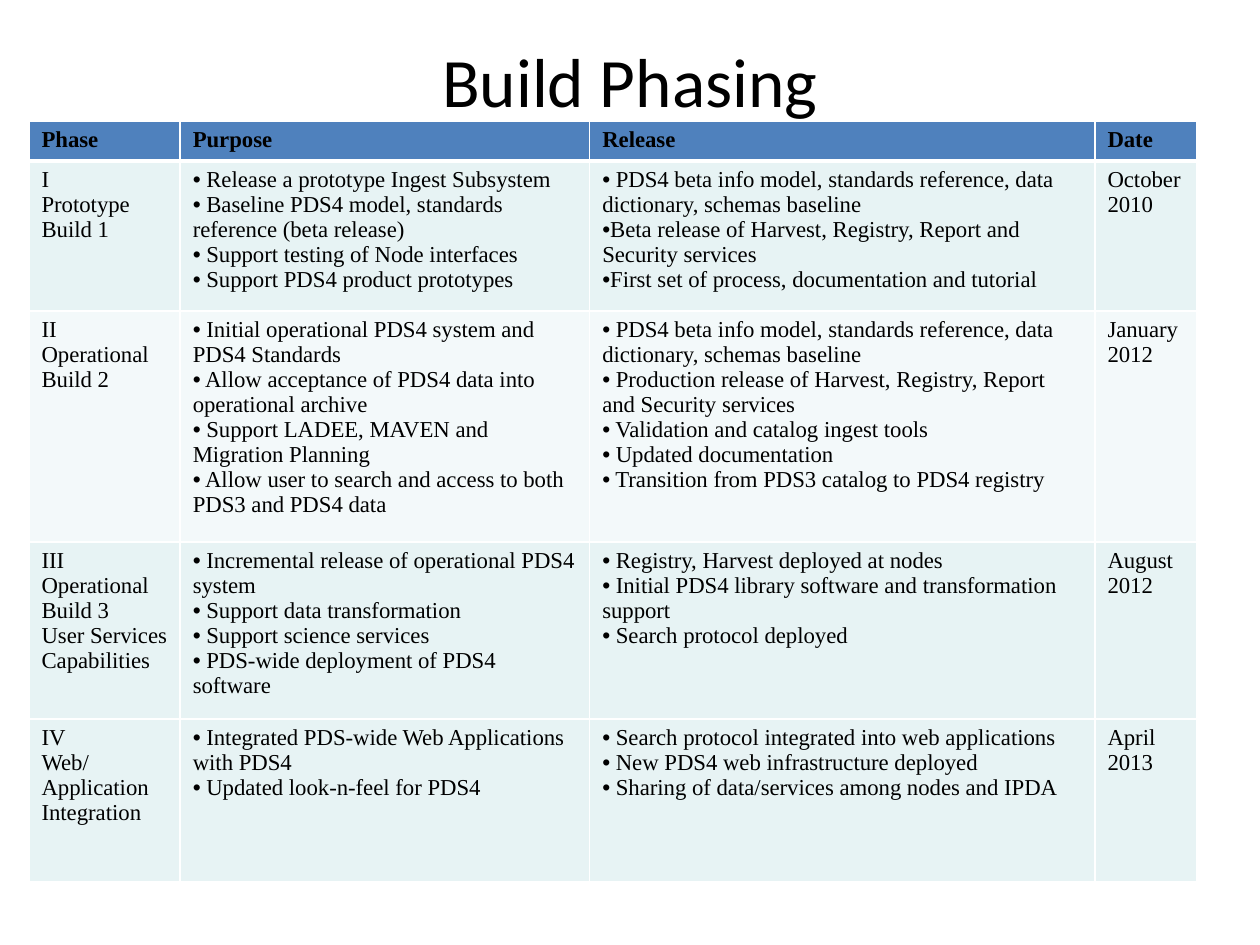
from pptx import Presentation
from pptx import util as u
from pptx.dml.color import RGBColor
from pptx.enum import text
from pptx.oxml import parse_xml
from pptx.oxml.ns import nsdecls

HUES = {"ink": "000000", "head": "4F81BD", "band": "E7F3F4",
        "pale": "F3F9FA", "rule": "FFFFFF"}
COLS = [1.2, 3.25, 4.01, 0.81]
ROWS = [0.3, 1.19, 1.71, 1.31, 1.29]
FILLS = ["head", "band", "pale", "band", "band"]
LISTS = (1, 2)  # bulleted columns

HEADS = ["Phase", "Purpose", "Release", "Date"]
# One entry per phase; each cell is a list of paragraphs
PHASES = [
    [["I", "Prototype", "Build 1"],
     [" Release a prototype Ingest Subsystem",
      " Baseline PDS4 model, standards reference (beta release)",
      " Support testing of Node interfaces",
      " Support PDS4 product prototypes"],
     [" PDS4 beta info model, standards reference, data dictionary, schemas baseline",
      "Beta release of Harvest, Registry, Report and Security services",
      "First set of process, documentation and tutorial"],
     ["October", "2010"]],
    [["II", "Operational", "Build 2"],
     [" Initial operational PDS4 system and PDS4 Standards",
      " Allow acceptance of PDS4 data into operational archive",
      " Support LADEE, MAVEN and Migration Planning",
      " Allow user to search and access to both PDS3 and PDS4 data"],
     [" PDS4 beta info model, standards reference, data dictionary, schemas baseline",
      " Production release of Harvest, Registry, Report and Security services",
      " Validation and catalog ingest tools",
      " Updated documentation",
      " Transition from PDS3 catalog to PDS4 registry"],
     ["January", "2012"]],
    [["III", "Operational", "Build 3", "User Services", "Capabilities"],
     [" Incremental release of operational PDS4 system",
      " Support data transformation",
      " Support science services",
      " PDS-wide deployment of PDS4 software"],
     [" Registry, Harvest deployed at nodes",
      " Initial PDS4 library software and transformation support",
      " Search protocol deployed"],
     ["August", "2012"]],
    [["IV", "Web/ Application Integration"],
     [" Integrated PDS-wide Web Applications with PDS4",
      " Updated look-n-feel for PDS4"],
     [" Search protocol integrated into web applications",
      " New PDS4 web infrastructure deployed",
      " Sharing of data/services among nodes and IPDA"],
     ["April 2013"]],
]


def hue(name):
    return RGBColor.from_string(HUES[name])


def style(para, face, size, bold=False):
    font = para.font
    font.name, font.size, font.bold = face, u.Pt(size), bold
    font.color.rgb = hue("ink")


def bullet(para):
    props = para._p.get_or_add_pPr()
    props.set("marL", "0")
    props.set("indent", "0")
    props.append(parse_xml(f'<a:buFont {nsdecls("a")} typeface="Arial"/>'))
    props.append(parse_xml(f'<a:buChar {nsdecls("a")} char="•"/>'))


def border(cell, row):
    """White rules, thicker between the header and the body."""
    widths = {"L": 1, "R": 1, "T": 3 if row == 1 else 1, "B": 3 if row == 0 else 1}
    props = cell._tc.get_or_add_tcPr()
    for side, width in widths.items():
        props.append(parse_xml(
            f'<a:ln{side} {nsdecls("a")} w="{u.Pt(width)}"><a:solidFill>'
            f'<a:srgbClr val="{HUES["rule"]}"/></a:solidFill></a:ln{side}>'))


def fill_cell(cell, lines, row, col):
    border(cell, row)
    cell.fill.solid()
    cell.fill.fore_color.rgb = hue(FILLS[row])
    frame = cell.text_frame
    frame.text = "\n".join(lines)
    for para in frame.paragraphs:
        if row and col in LISTS:
            bullet(para)
        style(para, "Times New Roman", 13, bold=row == 0)


def add_title(slide, left, top, width, height):
    frame = slide.shapes.add_textbox(*map(u.Inches, (left, top, width, height))).text_frame
    frame.word_wrap = True
    frame.vertical_anchor = text.MSO_ANCHOR.MIDDLE
    para = frame.paragraphs[0]
    para.text = "Build Phasing"
    para.alignment = text.PP_ALIGN.CENTER
    style(para, "Calibri", 39.6)


def add_phases(slide, left, top):
    box = map(u.Inches, (left, top, sum(COLS), sum(ROWS)))
    table = slide.shapes.add_table(len(ROWS), len(COLS), *box).table
    for col, width in zip(table.columns, COLS):
        col.width = u.Inches(width)
    for row, height in zip(table.rows, ROWS):
        row.height = u.Inches(height)
    for r, cells in enumerate([[[head] for head in HEADS]] + PHASES):
        for c, lines in enumerate(cells):
            fill_cell(table.cell(r, c), lines, r, c)


def main():
    deck = Presentation()
    deck.slide_width, deck.slide_height = u.Inches(10), u.Inches(7.5)
    slide = deck.slides.add_slide(deck.slide_layouts[6])
    add_title(slide, 0.5, 0.3, 9, 0.66)
    add_phases(slide, 0.23, 0.96)
    deck.save("out.pptx")


if __name__ == "__main__":
    main()
